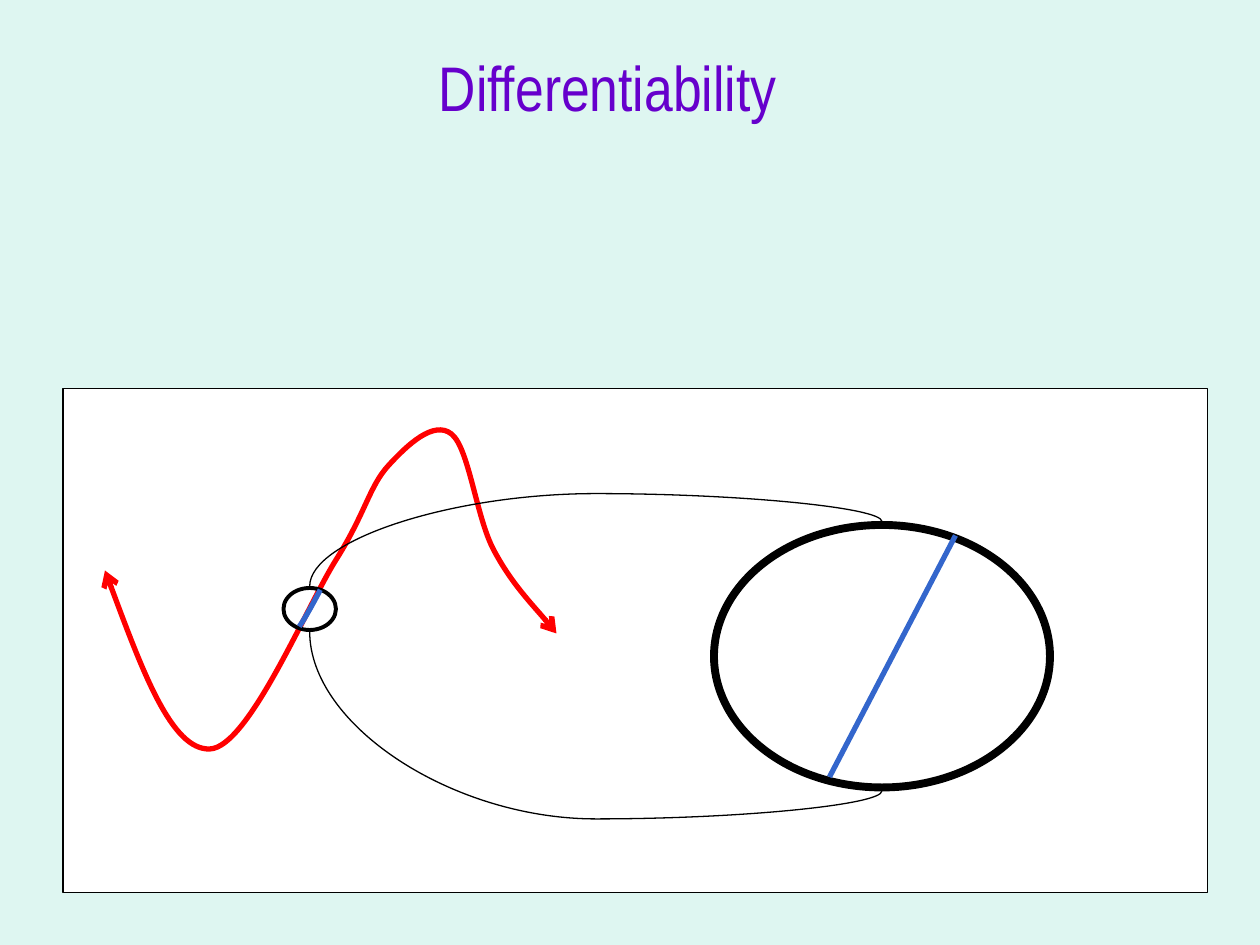
from lxml.etree import SubElement
from pptx import Presentation
from pptx.dml.color import RGBColor
from pptx.enum.shapes import MSO_CONNECTOR, MSO_SHAPE
from pptx.enum.text import MSO_ANCHOR, PP_ALIGN
from pptx.oxml.ns import qn
from pptx.util import Pt

COLORS = {
    "background": "DEF6F1",
    "panel": "FFFFFF",
    "outline": "000000",
    "curve": "FF0000",
    "segment": "3366CC",
    "title": "6600CC",
}

FUNCTION_CURVE = [
    (60, 326),
    (79, 377), (98, 429), (120, 428),
    (142, 427), (175, 347), (192, 320),
    (209, 293), (211, 278), (222, 266),
    (233, 254), (248, 240), (258, 248),
    (268, 256), (272, 295), (282, 314),
    (292, 333), (312, 354), (318, 362),
]
SMALL_SEGMENT = [(183, 337), (181, 341), (174, 354), (171, 358)]


def color(name):
    """Return the named colour."""
    return RGBColor.from_string(COLORS[name])


def set_line(item, name, width):
    """Set the line colour and width of a shape or connector."""
    item.line.color.rgb = color(name)
    item.line.width = Pt(width)


def add_outline(page, kind, left, top, width, height, weight, fill=None):
    """Add a preset shape with a black outline and an optional fill."""
    shape = page.shapes.add_shape(kind, Pt(left), Pt(top), Pt(width), Pt(height))
    shape.shadow.inherit = False
    if fill:
        shape.fill.solid()
        shape.fill.fore_color.rgb = color(fill)
    else:
        shape.fill.background()
    set_line(shape, "outline", weight)


def add_bezier(page, points, name, arrows=False):
    """Add an open curve whose start is followed by triples of Bezier points."""
    builder = page.shapes.build_freeform(*points[0], scale=Pt(1))
    builder.add_line_segments(points[1:], close=False)
    shape = builder.convert_to_shape()
    shape.shadow.inherit = False
    shape.fill.background()
    set_line(shape, name, 3)
    outline = next(shape.element.iter(qn("a:path")))
    steps = outline.findall(qn("a:lnTo"))
    for start in range(0, len(steps), 3):
        cubic = SubElement(outline, qn("a:cubicBezTo"))
        for step in steps[start:start + 3]:
            cubic.append(step[0])
            outline.remove(step)
    if arrows:
        line = shape.element.spPr.find(qn("a:ln"))
        for end in ("a:headEnd", "a:tailEnd"):
            SubElement(line, qn(end), type="arrow")


def add_link(page, kind, begin, end, name, width):
    """Add a connector without a shadow."""
    link = page.shapes.add_connector(kind, *map(Pt, (*begin, *end)))
    SubElement(link.element.spPr, qn("a:effectLst"))
    set_line(link, name, width)
    return link


def add_bowed_link(page, begin, end, bow):
    """Add a curved connector that leaves vertically and bows out to a height."""
    across, down = end[0] - begin[0], end[1] - begin[1]
    middle = (begin[0] + end[0]) / 2, (begin[1] + end[1]) / 2
    link = add_link(
        page, MSO_CONNECTOR.CURVE,
        (middle[0] + down / 2, middle[1] - across / 2),
        (middle[0] - down / 2, middle[1] + across / 2),
        "outline", 0.75,
    )
    properties = link.element.spPr
    properties.find(qn("a:xfrm")).set("rot", str(270 * 60000))
    geometry = properties.find(qn("a:prstGeom"))
    guides = geometry.find(qn("a:avLst"))
    if guides is None:
        guides = SubElement(geometry, qn("a:avLst"))
    share = round((bow - begin[1]) / down * 100000)
    SubElement(guides, qn("a:gd"), name="adj1", fmla=f"val {share}")


def add_text(page, text, *, left, top, width, height, size, font, fill):
    """Add a centred text box."""
    box = page.shapes.add_textbox(Pt(left), Pt(top), Pt(width), Pt(height))
    frame = box.text_frame
    frame.word_wrap = False
    frame.vertical_anchor = MSO_ANCHOR.TOP
    para = frame.paragraphs[0]
    para.alignment = PP_ALIGN.CENTER
    span = para.add_run()
    span.text = text
    span.font.size = Pt(size)
    span.font.name = font
    span.font.color.rgb = color(fill)


def main():
    """Build the differentiability slide."""
    deck = Presentation()
    deck.slide_width, deck.slide_height = Pt(720), Pt(540)
    page = deck.slides.add_slide(deck.slide_layouts[6])
    page.background.fill.solid()
    page.background.fill.fore_color.rgb = color("background")

    add_outline(page, MSO_SHAPE.RECTANGLE, 36, 222, 654, 288, 0.75, "panel")
    add_bezier(page, FUNCTION_CURVE, "curve", arrows=True)
    add_outline(page, MSO_SHAPE.OVAL, 162, 336, 30, 24, 2.25)
    add_outline(page, MSO_SHAPE.OVAL, 408, 300, 192, 150, 4.5)
    add_link(page, MSO_CONNECTOR.STRAIGHT, (474, 444), (546, 306), "segment", 3)
    add_bowed_link(page, (177, 335), (504, 298), 282)
    add_bowed_link(page, (177, 361), (504, 452), 468)
    add_bezier(page, SMALL_SEGMENT, "segment")
    add_text(page, "Differentiability", left=168, top=24, width=358.5,
             height=224.5, size=36, font="Arial Narrow", fill="title")
    deck.save("out.pptx")


if __name__ == "__main__":
    main()
